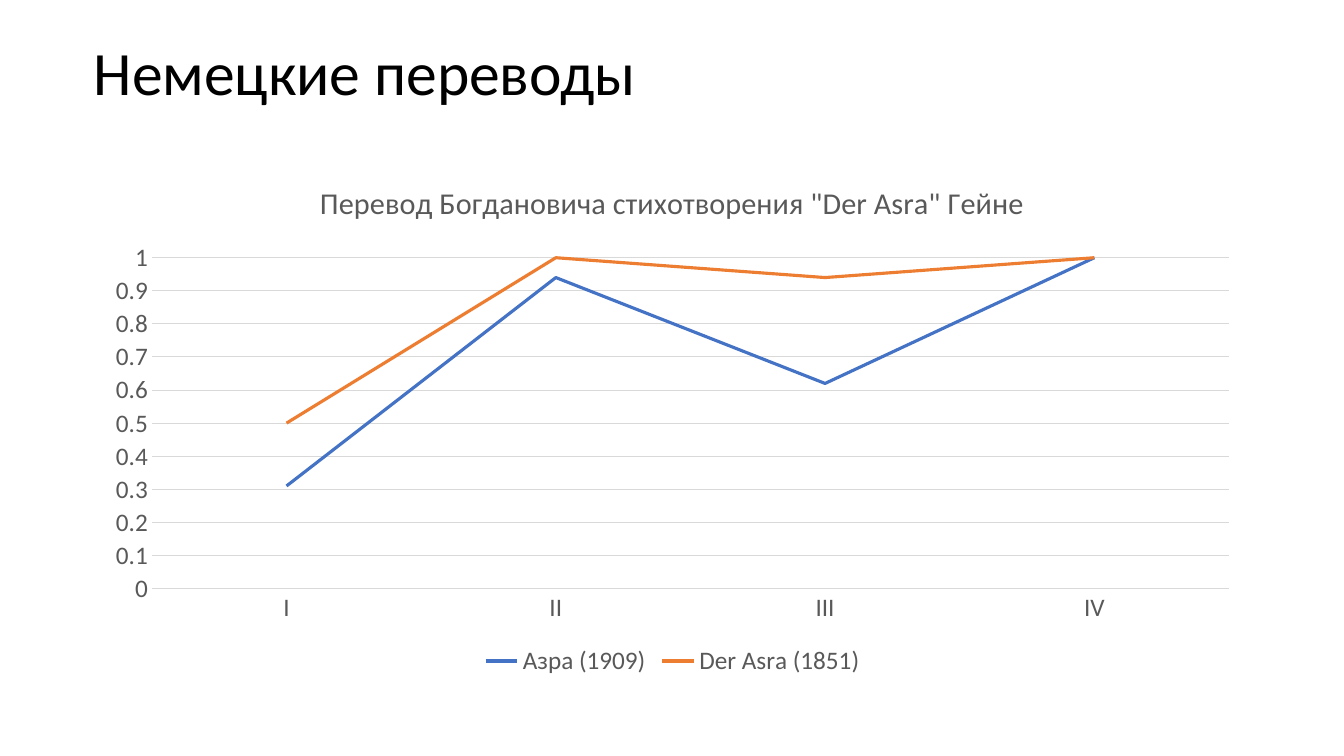
from pptx import Presentation
from pptx.chart.data import CategoryChartData
from pptx.dml.color import RGBColor
from pptx.enum.chart import XL_CHART_TYPE, XL_LEGEND_POSITION, XL_MARKER_STYLE, XL_TICK_MARK
from pptx.enum.text import MSO_ANCHOR, PP_ALIGN
from pptx.util import Inches, Pt

LINE = XL_CHART_TYPE.LINE
BOTTOM = XL_LEGEND_POSITION.BOTTOM
BARE = XL_MARKER_STYLE.NONE
NO_TICK = XL_TICK_MARK.NONE
MIDDLE = MSO_ANCHOR.MIDDLE
LEFT = PP_ALIGN.LEFT

BLACK = RGBColor(0x00, 0x00, 0x00)
GRAY = RGBColor(0x59, 0x59, 0x59)
PALE = RGBColor(0xD9, 0xD9, 0xD9)
BLUE = RGBColor(0x44, 0x72, 0xC4)
ORANGE = RGBColor(0xED, 0x7D, 0x31)

FACE = "Calibri"
STANZAS = ["I", "II", "III", "IV"]
POEMS = [
    ("Азра (1909)", [0.31, 0.94, 0.62, 1], BLUE),
    ("Der Asra (1851)", [0.5, 1, 0.94, 1], ORANGE),
]


def set_font(font, size, color):
    """Apply the slide typeface with a size and colour."""
    font.name = FACE
    font.size = Pt(size)
    font.bold = False
    font.color.rgb = color


def set_line(line, color, width):
    """Give a line its colour and width in points."""
    line.color.rgb = color
    line.width = Pt(width)


def add_title(slide, text, box):
    """Place and format the slide title in its box."""
    title = slide.shapes.title
    title.left, title.top, title.width, title.height = map(Inches, box)
    frame = title.text_frame
    frame.text = text
    frame.word_wrap = True
    frame.vertical_anchor = MIDDLE
    para = frame.paragraphs[0]
    para.alignment = LEFT
    para.line_spacing = 0.9
    set_font(para.runs[0].font, 44, BLACK)


def style_axes(chart):
    """Format both axes and the horizontal grid."""
    for axis in (chart.category_axis, chart.value_axis):
        axis.major_tick_mark = NO_TICK
        axis.minor_tick_mark = NO_TICK
        set_font(axis.tick_labels.font, 18, GRAY)
    set_line(chart.category_axis.format.line, PALE, 0.75)
    scale = chart.value_axis
    scale.minimum_scale, scale.maximum_scale = 0, 1
    scale.major_unit = 0.1
    scale.tick_labels.number_format = "General"
    scale.tick_labels.number_format_is_linked = False
    scale.format.line.fill.background()
    set_line(scale.major_gridlines.format.line, PALE, 0.75)


def add_graph(slide, text, box):
    """Draw the line chart of the poems in its box."""
    data = CategoryChartData()
    data.categories = STANZAS
    for name, values, _ in POEMS:
        data.add_series(name, values)
    chart = slide.shapes.add_chart(LINE, *map(Inches, box), data).chart
    set_font(chart.font, 18, BLACK)
    frame = chart.chart_title.text_frame
    frame.text = text
    set_font(frame.paragraphs[0].runs[0].font, 21.6, GRAY)
    chart.chart_title.include_in_layout = False
    chart.has_legend = True
    chart.legend.position = BOTTOM
    chart.legend.include_in_layout = False
    set_font(chart.legend.font, 18, GRAY)
    style_axes(chart)
    plot = chart.plots[0]
    plot.vary_by_categories = False
    for series, (_, _, color) in zip(plot.series, POEMS):
        series.smooth = False
        series.marker.style = BARE
        set_line(series.format.line, color, 2.25)


def main():
    """Build and save the slide."""
    deck = Presentation()
    deck.slide_width, deck.slide_height = Inches(13.33), Inches(7.5)
    slide = deck.slides.add_slide(deck.slide_layouts[5])
    add_title(slide, "Немецкие переводы", (0.83, 0.02, 11.5, 1.45))
    add_graph(slide, 'Перевод Богдановича стихотворения "Der Asra" Гейне',
              (0.92, 1.59, 11.5, 5.17))
    deck.save("out.pptx")


if __name__ == "__main__":
    main()
